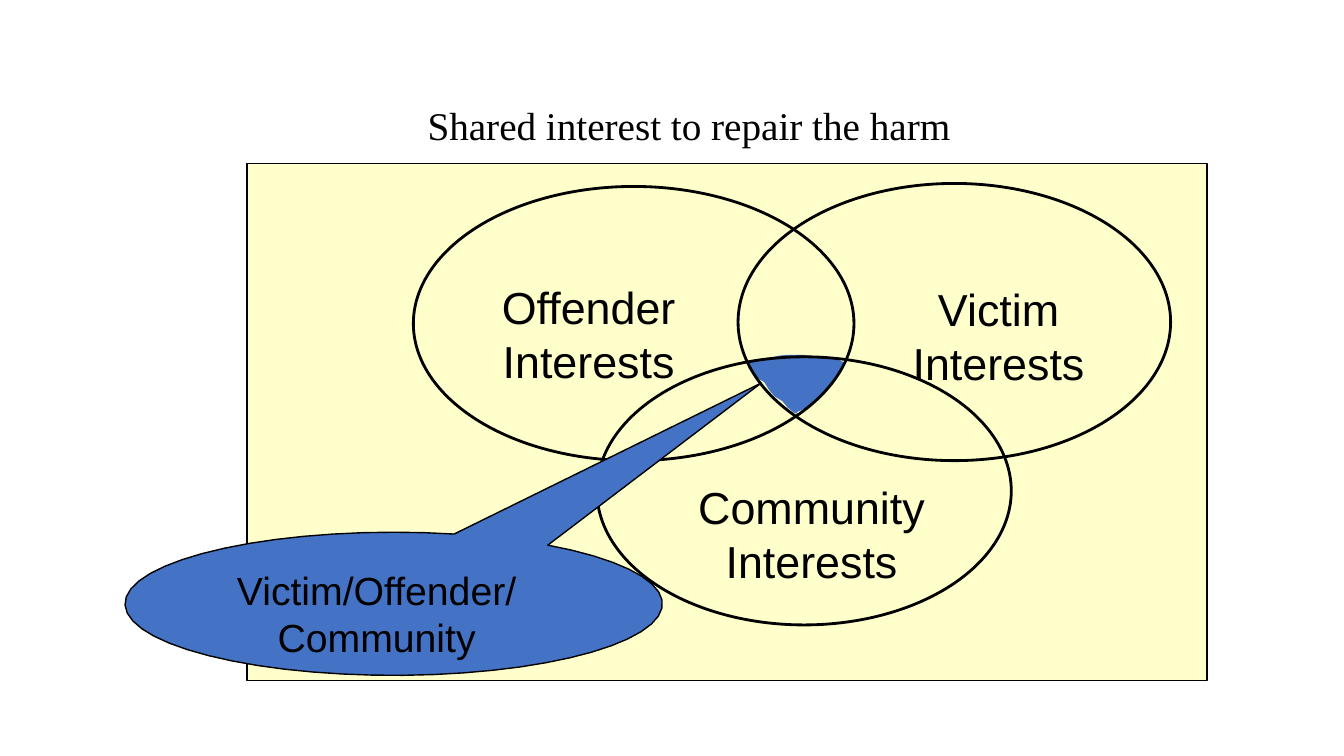
from math import cos, radians, sin
from typing import NamedTuple

from pptx import Presentation
from pptx.dml.color import RGBColor
from pptx.enum import shapes, text
from pptx.util import Inches, Pt

HUES = {"ink": "000000", "cream": "FFFFCC", "blue": "4472C4"}


class Box(NamedTuple):
    left: float
    top: float
    width: float
    height: float


class Label(NamedTuple):
    box: Box
    lines: str
    size: int = 32
    wrap: bool = False


FRAME = Box(2.45, 1.62, 9.52, 5.13)
TITLE = Box(2.97, 0.28, 6.7, 1.25)
LABELS = [
    Label(Box(4.56, 2.73, 2.56, 1.16), "Offender\nInterests"),
    Label(Box(8.64, 2.75, 2.53, 1.16), "Victim\nInterests"),
    Label(Box(6.42, 4.71, 3.26, 1.16), "Community\nInterests"),
]
RINGS = [
    Box(7.32, 1.82, 4.29, 2.75),
    Box(5.92, 3.54, 4.11, 2.66),
    Box(4.1, 1.85, 4.37, 2.72),
]
NOTE = Label(Box(1.53, 5.57, 4.41, 1.03), "Victim/Offender/\nCommunity", 28, True)
BUBBLE = Box(1.24, 5.28, 5.33, 1.42)
TIP = (7.55, 3.8)
CORE = [
    (7.9, 4.09), (7.99, 4.05), (8.07, 3.99), (8.13, 3.93), (8.19, 3.88),
    (8.24, 3.82), (8.27, 3.79), (8.32, 3.71), (8.38, 3.61), (8.36, 3.59),
    (8.32, 3.57), (8.24, 3.55), (8.16, 3.55), (8.06, 3.54), (7.97, 3.52),
    (7.8, 3.52), (7.72, 3.53), (7.57, 3.57), (7.41, 3.6), (7.43, 3.66),
    (7.47, 3.71), (7.51, 3.75), (7.58, 3.79), (7.63, 3.87), (7.68, 3.93),
    (7.76, 3.98), (7.81, 4.04), (7.87, 4.09), (7.92, 4.11),
]


def tint(name: str) -> RGBColor:
    return RGBColor.from_string(HUES[name])


def paint(shape, fill: str = "", line: float = 0) -> None:
    shape.shadow.inherit = False
    if fill:
        shape.fill.solid()
        shape.fill.fore_color.rgb = tint(fill)
    else:
        shape.fill.background()
    if line:
        shape.line.color.rgb = tint("ink")
        shape.line.width = Pt(line)
    else:
        shape.line.fill.background()


def place(slide, kind, box: Box, fill: str, line: float) -> None:
    shape = slide.shapes.add_shape(kind, *map(Inches, box))
    paint(shape, fill, line)


def trace(slide, points: list, line: float = 0) -> None:
    spots = [(Inches(x), Inches(y)) for x, y in points]
    path = slide.shapes.build_freeform(*spots[0])
    path.add_line_segments(spots[1:])
    paint(path.convert_to_shape(), "blue", line)


def style(frame, face: str, size: int) -> None:
    for para in frame.paragraphs:
        for run in para.runs:
            run.font.name = face
            run.font.size = Pt(size)
            run.font.color.rgb = tint("ink")


def write(slide, label: Label) -> None:
    frame = slide.shapes.add_textbox(*map(Inches, label.box)).text_frame
    frame.text = label.lines
    frame.word_wrap = label.wrap
    frame.auto_size = text.MSO_AUTO_SIZE.SHAPE_TO_FIT_TEXT
    for para in frame.paragraphs:
        para.alignment = text.PP_ALIGN.CENTER
    style(frame, "Arial", label.size)


def head(slide) -> None:
    title = slide.shapes.title
    title.left, title.top, title.width, title.height = map(Inches, TITLE)
    frame = title.text_frame
    frame.text = "Shared interest to repair the harm"
    frame.word_wrap = True
    frame.auto_size = text.MSO_AUTO_SIZE.NONE
    frame.vertical_anchor = text.MSO_ANCHOR.BOTTOM
    frame.margin_left = Inches(1.27)
    para = frame.paragraphs[0]
    para.alignment = text.PP_ALIGN.LEFT
    para.line_spacing = 0.9
    style(frame, "Times New Roman", 28)


def bubble() -> list:
    wide, high = BUBBLE.width / 2, BUBBLE.height / 2
    mid, level = BUBBLE.left + wide, BUBBLE.top + high
    start, sweep, steps = -55, 338, 52
    turns = [radians(start + sweep * i / steps) for i in range(steps + 1)]
    return [(mid + wide * cos(t), level + high * sin(t)) for t in turns] + [TIP]


def main() -> None:
    deck = Presentation()
    deck.slide_width, deck.slide_height = Inches(13.33), Inches(7.5)
    slide = deck.slides.add_slide(deck.slide_layouts[5])
    place(slide, shapes.MSO_SHAPE.RECTANGLE, FRAME, "cream", 1)
    head(slide)
    trace(slide, CORE)
    for label in LABELS:
        write(slide, label)
    for ring in RINGS:
        place(slide, shapes.MSO_SHAPE.OVAL, ring, "", 2)
    trace(slide, bubble(), 1)
    write(slide, NOTE)
    deck.save("out.pptx")


if __name__ == "__main__":
    main()
